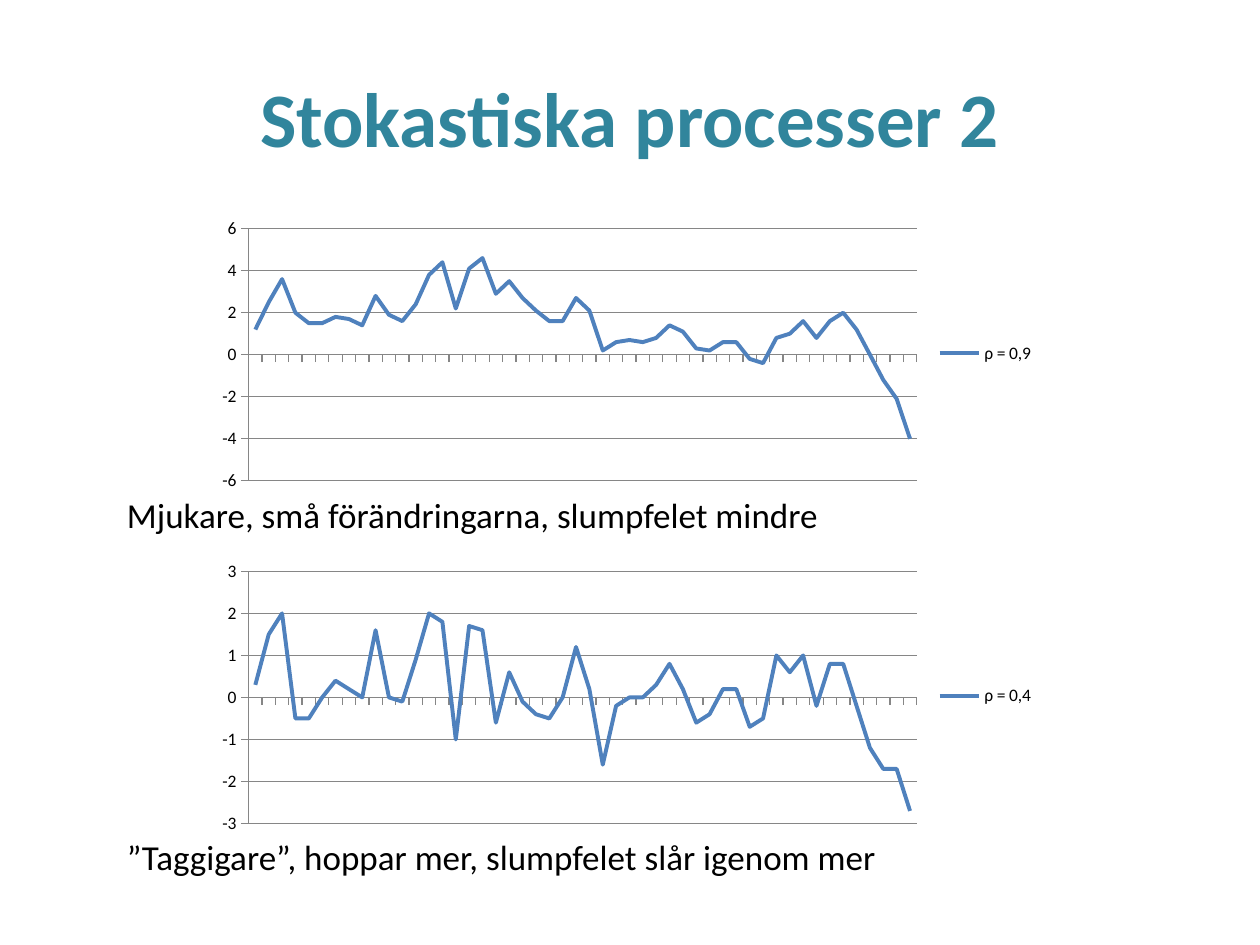
from lxml import etree
from pptx import Presentation
from pptx.chart.data import CategoryChartData
from pptx.dml.color import RGBColor
from pptx.enum.chart import (XL_CHART_TYPE, XL_LEGEND_POSITION, XL_TICK_LABEL_POSITION,
                             XL_TICK_MARK)
from pptx.enum.text import MSO_ANCHOR, PP_ALIGN
from pptx.oxml.ns import qn
from pptx.util import Inches, Pt

LINE_CHART = XL_CHART_TYPE.LINE
LEGEND_RIGHT = XL_LEGEND_POSITION.RIGHT
NO_LABELS = XL_TICK_LABEL_POSITION.NONE
LABELS_LOW = XL_TICK_LABEL_POSITION.LOW
TICK_OUTSIDE = XL_TICK_MARK.OUTSIDE
CENTER, LEFT = PP_ALIGN.CENTER, PP_ALIGN.LEFT
MIDDLE, TOP = MSO_ANCHOR.MIDDLE, MSO_ANCHOR.TOP

TEAL = RGBColor(0x31, 0x85, 0x9C)
BLUE = RGBColor(0x4F, 0x81, 0xBD)
GRAY = RGBColor(0x86, 0x86, 0x86)
BLACK = RGBColor(0, 0, 0)

PLOT_LAYOUT = {"x": 0.05, "y": 0.06, "w": 0.795, "h": 0.89}

SMOOTH_PROCESS = [
    1.2, 2.5, 3.6, 2, 1.5, 1.5, 1.8, 1.7, 1.4, 2.8, 1.9, 1.6, 2.4, 3.8, 4.4, 2.2, 4.1,
    4.6, 2.9, 3.5, 2.7, 2.1, 1.6, 1.6, 2.7, 2.1, 0.2, 0.6, 0.7, 0.6, 0.8, 1.4, 1.1, 0.3,
    0.2, 0.6, 0.6, -0.2, -0.4, 0.8, 1, 1.6, 0.8, 1.6, 2, 1.2, 0, -1.2, -2.1, -4]
JAGGED_PROCESS = [
    0.3, 1.5, 2, -0.5, -0.5, 0, 0.4, 0.2, 0, 1.6, 0, -0.1, 0.9, 2, 1.8, -1, 1.7, 1.6,
    -0.6, 0.6, -0.1, -0.4, -0.5, 0, 1.2, 0.2, -1.6, -0.2, 0, 0, 0.3, 0.8, 0.2, -0.6,
    -0.4, 0.2, 0.2, -0.7, -0.5, 1, 0.6, 1, -0.2, 0.8, 0.8, -0.2, -1.2, -1.7, -1.7, -2.7]


def set_values(target, values):
    for name, value in values.items():
        setattr(target, name, value)


def fix_plot_layout(chart):
    """Pin the inner plot area to fractions of the chart frame."""
    plot_area = chart.plots[0]._element.getparent()
    for automatic in plot_area.findall(qn("c:layout")):
        plot_area.remove(automatic)
    layout = etree.Element(qn("c:layout"))
    manual = etree.SubElement(layout, qn("c:manualLayout"))
    settings = {"layoutTarget": "inner", "xMode": "edge", "yMode": "edge", **PLOT_LAYOUT}
    for tag, value in settings.items():
        etree.SubElement(manual, qn(f"c:{tag}")).set("val", str(value))
    plot_area.insert(0, layout)


class SlideBuilder:
    font_name = "Calibri"

    def __init__(self, presentation):
        self.slide = presentation.slides.add_slide(presentation.slide_layouts[5])

    def _write(self, frame, text, size, color, bold, align, anchor):
        set_values(frame, {"word_wrap": True, "vertical_anchor": anchor})
        paragraph = frame.paragraphs[0]
        paragraph.alignment = align
        run = paragraph.add_run()
        run.text = text
        set_values(run.font, {"name": self.font_name, "size": Pt(size), "bold": bold})
        run.font.color.rgb = color

    def title(self, text):
        heading = self.slide.shapes.title
        set_values(heading, {"left": Inches(0.5), "top": Inches(0.3),
                             "width": Inches(9), "height": Inches(1.25)})
        self._write(heading.text_frame, text, 44, TEAL, True, CENTER, MIDDLE)

    def caption(self, text, top):
        box = self.slide.shapes.add_textbox(Inches(0.91), Inches(top), Inches(8.5), Inches(0.47))
        self._write(box.text_frame, text, 20, BLACK, False, LEFT, TOP)

    def line_chart(self, name, values, top, limit, step):
        """Draw one process on a value axis running from -limit to limit."""
        data = CategoryChartData()
        data.categories = [str(period) for period in range(1, len(values) + 1)]
        data.add_series(name, values)
        chart = self.slide.shapes.add_chart(
            LINE_CHART, Inches(1.64), Inches(top), Inches(6.67), Inches(2.25), data).chart
        set_values(chart, {"has_title": False, "has_legend": True})
        set_values(chart.font, {"name": self.font_name, "size": Pt(10)})
        chart.font.color.rgb = BLACK
        set_values(chart.legend, {"position": LEGEND_RIGHT, "include_in_layout": False})

        periods, levels = chart.category_axis, chart.value_axis
        set_values(periods, {"tick_label_position": NO_LABELS, "has_major_gridlines": False})
        set_values(levels, {"minimum_scale": -limit, "maximum_scale": limit,
                            "major_unit": step, "has_major_gridlines": True,
                            "tick_label_position": LABELS_LOW})
        for axis in (periods, levels):
            axis.major_tick_mark = TICK_OUTSIDE
        for line in (periods.format.line, levels.format.line, levels.major_gridlines.format.line):
            line.color.rgb = GRAY
            line.width = Pt(0.75)

        chart.plots[0].vary_by_categories = False
        process = chart.plots[0].series[0]
        process.smooth = False
        process.format.line.color.rgb = BLUE
        process.format.line.width = Pt(2.25)
        fix_plot_layout(chart)


def main():
    presentation = Presentation()
    set_values(presentation, {"slide_width": Inches(10), "slide_height": Inches(7.5)})
    builder = SlideBuilder(presentation)
    builder.title("Stokastiska processer 2")
    builder.line_chart("ρ = 0,9", SMOOTH_PROCESS, top=1.68, limit=6, step=2)
    builder.line_chart("ρ = 0,4", JAGGED_PROCESS, top=4.4, limit=3, step=1)
    builder.caption("”Taggigare”, hoppar mer, slumpfelet slår igenom mer", top=6.58)
    builder.caption("Mjukare, små förändringarna, slumpfelet mindre", top=3.87)
    presentation.save("out.pptx")


if __name__ == "__main__":
    main()
